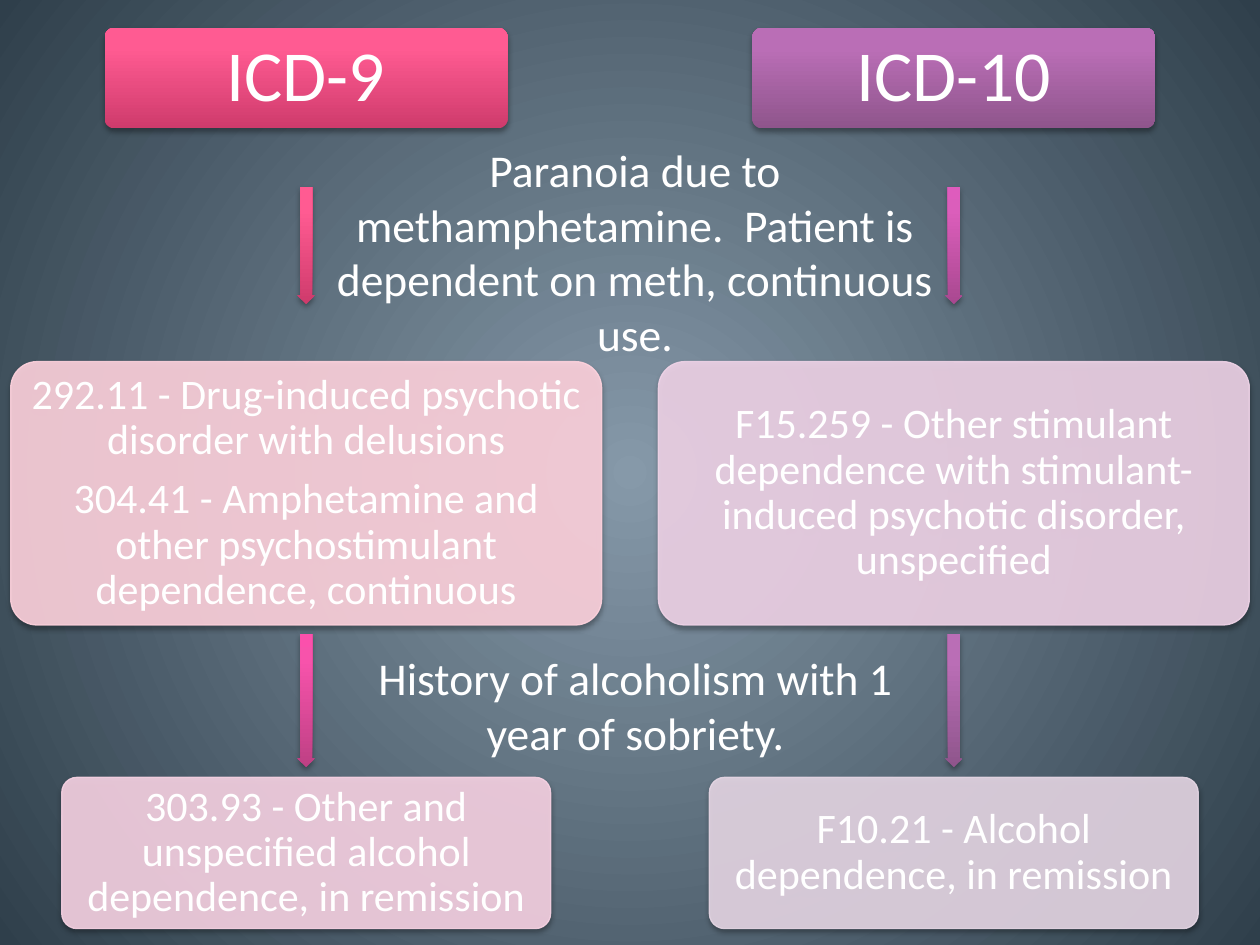
"""Build a slide comparing ICD-9 and ICD-10 codes for two diagnoses."""
from lxml import etree
from pptx import Presentation
from pptx.dml.color import RGBColor
from pptx.enum.shapes import MSO_SHAPE
from pptx.enum.text import MSO_ANCHOR, MSO_AUTO_SIZE, PP_ALIGN
from pptx.oxml import parse_xml
from pptx.oxml.ns import nsdecls, qn
from pptx.util import Inches, Pt

ROUNDED = MSO_SHAPE.ROUNDED_RECTANGLE
ARROW = MSO_SHAPE.RIGHT_ARROW
MIDDLE = MSO_ANCHOR.MIDDLE
CENTER = PP_ALIGN.CENTER
FIT_SHAPE = MSO_AUTO_SIZE.SHAPE_TO_FIT_TEXT

COLORS = {
    "text": "FFFFFF",
    "backdrop": ("8699A9", "2F3F4B"),
    "rose": ("CF3B6C", "FF5B92", "FF5D93"),
    "pink": ("BE4084", "F753AB", "FB50AC"),
    "orchid": ("A94890", "DB5EBB", "DE5CBD"),
    "purple": ("8F558C", "BA6EB6", "BC6EB8"),
    "pale_rose": "FFD3DE",
    "pale_pink": "F8D3E4",
    "pale_orchid": "F0D4E8",
    "pale_purple": "E6D7E5",
}
SHADOW = (
    f'<a:outerShdw {nsdecls("a")} blurRad="40000" dist="23000" dir="5400000" rotWithShape="0">'
    '<a:srgbClr val="000000"><a:alpha val="35000"/></a:srgbClr></a:outerShdw>'
)


def set_gradient(grad, colors, positions, direction):
    stops = "".join(
        f'<a:gs pos="{pos * 1000}"><a:srgbClr val="{color}"/></a:gs>'
        for pos, color in zip(positions, colors)
    )
    new = parse_xml(
        f'<a:gradFill {nsdecls("a")} rotWithShape="0">'
        f"<a:gsLst>{stops}</a:gsLst>{direction}</a:gradFill>"
    )
    grad.getparent().replace(grad, new)


def write(tf, paragraphs, size, margin=None, spacing=None):
    tf.word_wrap = True
    if margin is not None:
        tf.vertical_anchor = MIDDLE
        tf.margin_left = tf.margin_right = Inches(margin)
        tf.margin_top = tf.margin_bottom = Inches(margin)
    for i, text in enumerate(paragraphs):
        p = tf.paragraphs[0] if i == 0 else tf.add_paragraph()
        p.alignment = CENTER
        p.line_spacing = spacing
        if i < len(paragraphs) - 1:
            p.space_after = Pt(8)
        r = p.add_run()
        r.text = text
        r.font.size = Pt(size)
        r.font.name = "Calibri"
        r.font.color.rgb = RGBColor.from_string(COLORS["text"])


prs = Presentation()
prs.slide_width, prs.slide_height = Inches(10), Inches(7.5)
s = prs.slides.add_slide(prs.slide_layouts[6])

s.background.fill.gradient()
set_gradient(
    s.background._cSld.find(".//" + qn("a:gradFill")), COLORS["backdrop"], (0, 100),
    '<a:path path="circle"><a:fillToRect l="50000" t="50000" r="50000" b="50000"/></a:path>',
)

captions = [
    ("History of alcoholism with 1 year of sobriety.", 2.67, 5.11, 4.75, 0.98),
    ("Paranoia due to methamphetamine.  Patient is dependent on meth, continuous use.",
     2.5, 1.08, 5.08, 1.85),
]
for text, *box in captions:
    tb = s.shapes.add_textbox(*map(Inches, box))
    write(tb.text_frame, [text], 26)
    tb.text_frame.auto_size = FIT_SHAPE

columns = [
    (2.43, "ICD-9", "rose", ("rose", "pink"), ("pale_rose", "pale_pink"), (
        ["292.11 - Drug-induced psychotic disorder with delusions",
         "304.41 - Amphetamine and other psychostimulant dependence, continuous"],
        ["303.93 - Other and unspecified alcohol dependence, in remission"])),
    (7.57, "ICD-10", "purple", ("orchid", "purple"), ("pale_orchid", "pale_purple"), (
        ["F15.259 - Other stimulant dependence with stimulant-induced psychotic disorder, "
         "unspecified"],
        ["F10.21 - Alcohol dependence, in remission"])),
]
arrow_rows = [(1.95, 0.93), (5.56, 1.06)]
code_rows = [(2.87, 4.69, 2.09), (6.17, 3.88, 1.2)]

for center, heading, heading_color, arrow_colors, code_colors, codes in columns:
    parts = [(ROUNDED, 3.2, 0.22, 0.8, heading_color, [heading], 41, 0.06)]
    for i in range(2):
        middle, length = arrow_rows[i]
        top, width, height = code_rows[i]
        parts.append((ARROW, length, middle - 0.07, 0.14, arrow_colors[i], [], 0, 0))
        parts.append((ROUNDED, width, top, height, code_colors[i], codes[i], 24, 0.03))

    for kind, width, top, height, color, paragraphs, size, margin in parts:
        sp = s.shapes.add_shape(
            kind, Inches(center - width / 2), Inches(top), Inches(width), Inches(height))
        if kind == ARROW:
            sp.rotation = 90
            sp.adjustments[0], sp.adjustments[1] = 0.67, 0.5
        else:
            sp.adjustments[0] = 0.1
        if color.startswith("pale"):
            rgb = RGBColor.from_string(COLORS[color])
            sp.fill.solid()
            sp.fill.fore_color.rgb = rgb
            sp.line.color.rgb = rgb
            sp.line.width = Pt(0.75)
            for clr in sp._element.spPr.iter(qn("a:srgbClr")):
                etree.SubElement(clr, qn("a:alpha"), val="90000")
        else:
            sp.fill.gradient()
            set_gradient(sp._element.spPr.find(qn("a:gradFill")), COLORS[color],
                         (0, 80, 100), '<a:lin ang="16200000" scaled="0"/>')
            sp.line.fill.background()
        sp.shadow.inherit = False
        sp._element.spPr.find(qn("a:effectLst")).append(parse_xml(SHADOW))
        write(sp.text_frame, paragraphs, size, margin, 0.9)

prs.save("out.pptx")
